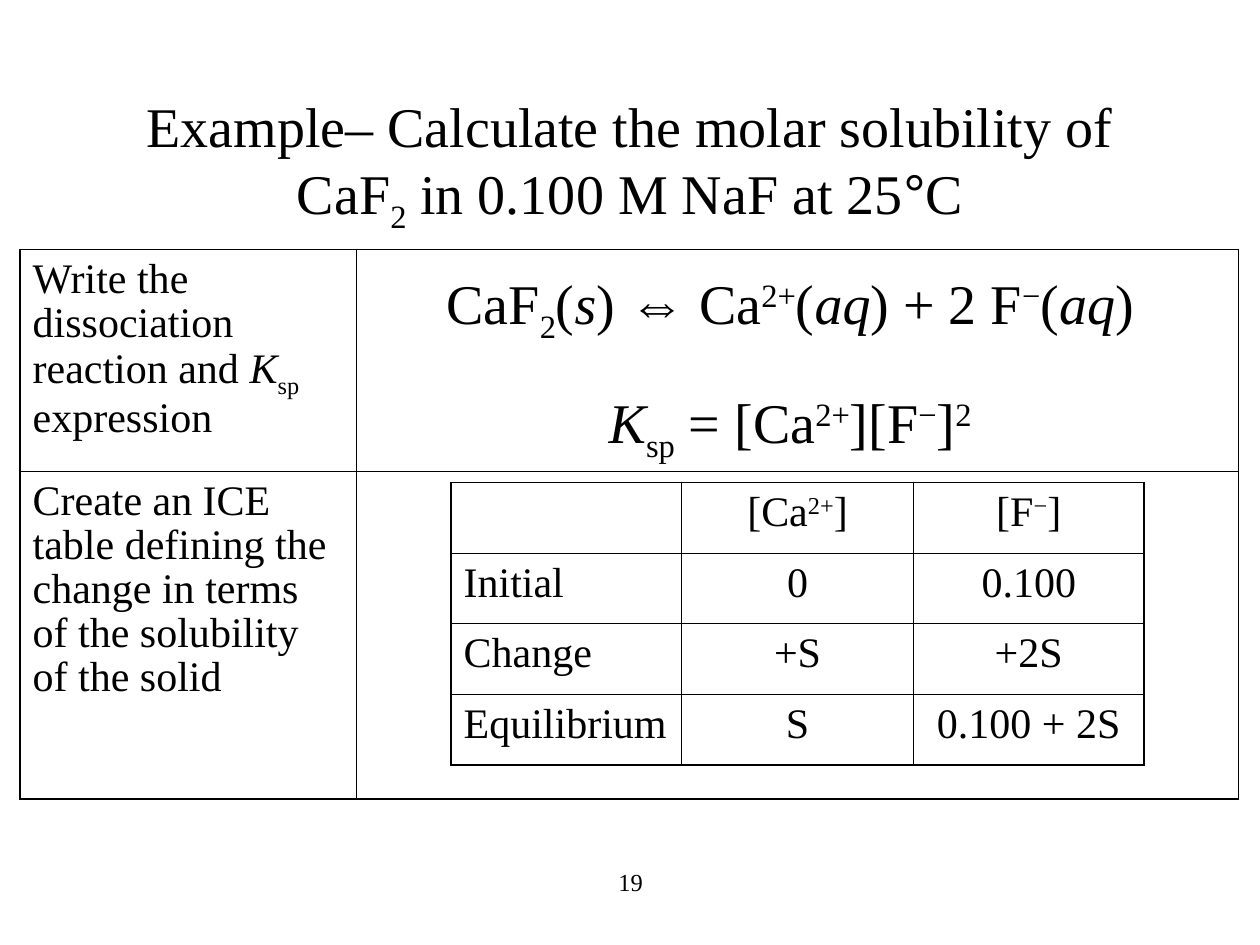
from lxml import etree
from pptx import Presentation
from pptx.dml.color import RGBColor
from pptx.enum.text import MSO_ANCHOR, PP_ALIGN
from pptx.oxml.ns import qn
from pptx.util import Inches, Pt

LEFT, CENTER = PP_ALIGN.LEFT, PP_ALIGN.CENTER
TOP, MIDDLE = MSO_ANCHOR.TOP, MSO_ANCHOR.MIDDLE
COLORS = {"text": "000000", "border": "000000"}
FONT, SYMBOL_FONT = "Times New Roman", "Arial"
OUTER_LINE, INNER_LINE = 1.08, 0.45
BASELINES = {"sub": "-25000", "sup": "30000"}


class Slide:
    """Holds the text style and the page being filled."""

    def __init__(self, page):
        self.page = page

    def paragraph(self, para, spans, size, align=LEFT, spacing=None, before=0):
        """Fill a paragraph; a span is plain text or (text, style)."""
        para.alignment = align
        para.space_before = Pt(before)
        if spacing:
            para.line_spacing = spacing
        para.font.size = Pt(size)
        para.font.name = FONT
        para.font.color.rgb = RGBColor.from_string(COLORS["text"])
        for item in spans:
            text, style = (item, None) if isinstance(item, str) else item
            span = para.add_run()
            span.text = text
            if style == "italic":
                span.font.italic = True
            elif style == "symbol":
                span.font.name = SYMBOL_FONT
            elif style in BASELINES:
                span._r.get_or_add_rPr().set("baseline", BASELINES[style])

    def text(self, left, top, width, height, paragraphs, anchor=TOP, wrap=True):
        """Add a text box of centred (spans, size, options) paragraphs."""
        box = self.page.shapes.add_textbox(
            Inches(left), Inches(top), Inches(width), Inches(height))
        frame = box.text_frame
        frame.word_wrap = wrap
        frame.vertical_anchor = anchor
        for index, (spans, size, options) in enumerate(paragraphs):
            para = frame.add_paragraph() if index else frame.paragraphs[0]
            self.paragraph(para, spans, size, CENTER, **options)

    def border(self, cell, widths):
        """Draw the left, right, top and bottom lines of a cell."""
        properties = cell._tc.get_or_add_tcPr()
        for index, (side, width) in enumerate(zip("LRTB", widths)):
            line = etree.Element(qn(f"a:ln{side}"), w=str(Pt(width)))
            fill = etree.SubElement(line, qn("a:solidFill"))
            etree.SubElement(fill, qn("a:srgbClr"), val=COLORS["border"])
            properties.insert(index, line)

    def table(self, left, top, columns, rows, cells):
        """Add an unfilled grid with a heavier frame; first column is left-aligned."""
        table = self.page.shapes.add_table(
            len(rows), len(columns), Inches(left), Inches(top),
            Inches(sum(columns)), Inches(sum(rows))).table
        table.first_row = table.horz_banding = False
        for column, width in zip(table.columns, columns):
            column.width = Inches(width)
        for row, height in zip(table.rows, rows):
            row.height = Inches(height)
        for r, line in enumerate(cells):
            for c, spans in enumerate(line):
                cell = table.cell(r, c)
                cell.fill.background()
                cell.margin_top = Inches(0.07)
                edges = (c == 0, c == len(columns) - 1, r == 0, r == len(rows) - 1)
                self.border(cell, [OUTER_LINE if edge else INNER_LINE for edge in edges])
                if spans:
                    self.paragraph(cell.text_frame.paragraphs[0], spans, 24,
                                   CENTER if c else LEFT, spacing=0.95, before=6)


def main():
    deck = Presentation()
    deck.slide_width, deck.slide_height = Inches(10), Inches(7.5)
    slide = Slide(deck.slides.add_slide(deck.slide_layouts[6]))

    # Page number and title
    slide.text(3.42, 6.83, 3.17, 0.5, [(["19"], 14, {})])
    title = ["Example– Calculate the molar solubility of CaF", ("2", "sub"),
             " in 0.100 M NaF at 25", ("°", "symbol"), "C"]
    slide.text(0.75, 0.67, 8.5, 1.25, [(title, 32, {})], anchor=MIDDLE)

    # Steps of the solution
    slide.table(0.16, 1.98, [2.67, 7], [1.76, 2.6], [
        [["Write the dissociation reaction and ", ("K", "italic"), ("sp", "sub"),
          " expression"], []],
        [["Create an ICE table defining the change in terms of "
          "the solubility of the solid"], []],
    ])

    # ICE table
    slide.table(3.58, 3.83, [1.83, 1.84, 1.83], [0.56] * 4, [
        [[], ["[Ca", ("2+", "sup"), "]"], ["[F", ("−", "sup"), "]"]],
        [["Initial"], ["0"], ["0.100"]],
        [["Change"], ["+S"], ["+2S"]],
        [["Equilibrium"], ["S"], ["0.100 + 2S"]],
    ])

    # Dissociation reaction and solubility product
    reaction = ["CaF", ("2", "sub"), "(", ("s", "italic"), ") ", ("⇔", "symbol"),
                " Ca", ("2+", "sup"), "(", ("aq", "italic"), ") + 2 F",
                ("−", "sup"), "(", ("aq", "italic"), ")"]
    product = [("K", "italic"), ("sp", "sub"), " = [Ca", ("2+", "sup"), "][F",
               ("−", "sup"), "]", ("2", "sup")]
    slide.text(3.43, 2.08, 5.68, 1.58, [
        (reaction, 32, {}),
        (product, 32, {"spacing": 0.75, "before": 30}),
    ], wrap=False)

    deck.save("out.pptx")


if __name__ == "__main__":
    main()
